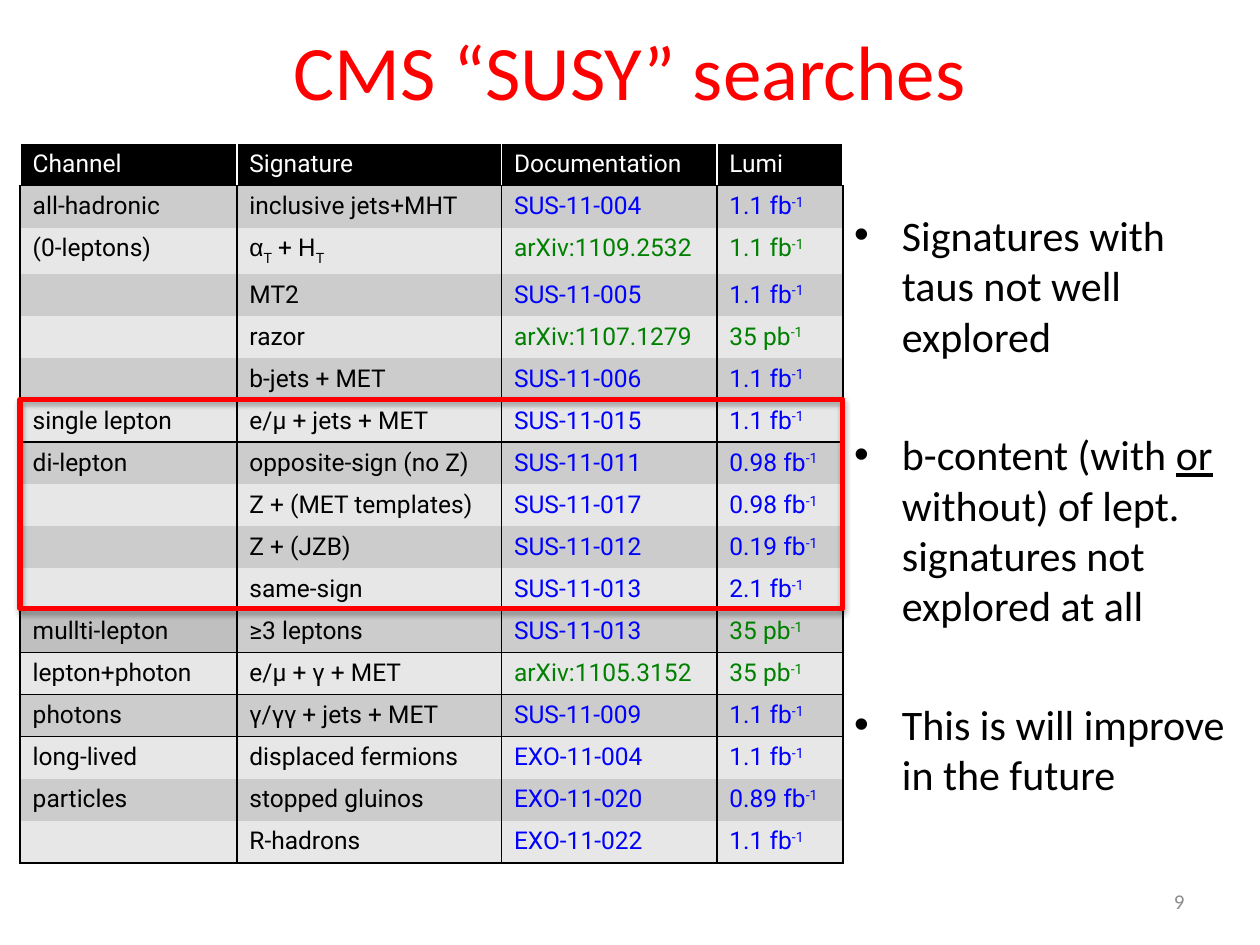
from lxml import etree
from pptx import Presentation
from pptx.dml.color import RGBColor
from pptx.enum.shapes import MSO_SHAPE as Shape
from pptx.enum.text import MSO_ANCHOR as Anchor, PP_ALIGN as Align
from pptx.oxml import parse_xml
from pptx.oxml.ns import nsdecls, qn
from pptx.util import Inches, Pt

COLORS = {
    "black": "000000", "white": "FFFFFF", "red": "FF0000", "blue": "0000FF",
    "green": "008000", "number": "8C8C8C", "dark band": "CCCCCC",
    "light band": "E7E7E7", "marked": "BFBFBF",
}
HEADER = ("Channel", "Signature", "Documentation", "Lumi")
# Each group of searches is framed; "^" raises and "_" lowers a piece between bars.
GROUPS = [
    [("all-hadronic", "inclusive jets+MHT", "SUS-11-004", "1.1 fb"),
     ("(0-leptons)", "α|_T| + H|_T", "arXiv:1109.2532", "1.1 fb"),
     ("", "MT2", "SUS-11-005", "1.1 fb"),
     ("", "razor", "arXiv:1107.1279", "35 pb"),
     ("", "b-jets + MET", "SUS-11-006", "1.1 fb")],
    [("single lepton", "e/μ + jets + MET", "SUS-11-015", "1.1 fb")],
    [("di-lepton", "opposite-sign (no Z)", "SUS-11-011", "0.98 fb"),
     ("", "Z + (MET templates)", "SUS-11-017", "0.98 fb"),
     ("", "Z + (JZB)", "SUS-11-012", "0.19 fb"),
     ("", "same-sign", "SUS-11-013", "2.1 fb")],
    [("mullti-lepton", "≥3 leptons", "SUS-11-013", "35 pb")],
    [("lepton+photon", "e/μ + γ + MET", "arXiv:1105.3152", "35 pb")],
    [("photons", "γ/γγ + jets + MET", "SUS-11-009", "1.1 fb")],
    [("long-lived", "displaced fermions", "EXO-11-004", "1.1 fb"),
     ("particles", "stopped gluinos", "EXO-11-020", "0.89 fb"),
     ("", "R-hadrons", "EXO-11-022", "1.1 fb")],
]
POINTS = [
    ["Signatures with taus not well explored"],
    ["b-content (with ", "or", " without) of lept. signatures not explored at all"],
    ["This is will improve in the future"],
]


def rgb(name):
    return RGBColor.from_string(COLORS[name])


class SlideBuilder:
    body_font = "Calibri"
    table_font = "Roboto"
    table_size = 14
    baselines = {"^": "30000", "_": "-25000"}

    def __init__(self, slide):
        self.slide = slide

    def style(self, run, size, color, font=None):
        run.font.size = Pt(size)
        run.font.name = font or self.body_font
        run.font.color.rgb = rgb(color)

    def title(self, text, left, top, width, height):
        title = self.slide.shapes.title
        title.left, title.top = Inches(left), Inches(top)
        title.width, title.height = Inches(width), Inches(height)
        frame = title.text_frame
        frame.text = text
        frame.vertical_anchor = Anchor.MIDDLE
        frame.paragraphs[0].alignment = Align.CENTER
        self.style(frame.paragraphs[0].runs[0], 44, "red")

    def text_frame(self, left, top, width, height):
        box = self.slide.shapes.add_textbox(
            Inches(left), Inches(top), Inches(width), Inches(height))
        box.text_frame.word_wrap = True
        return box.text_frame

    def slide_number(self, text, *place):
        frame = self.text_frame(*place)
        frame.text = text
        frame.vertical_anchor = Anchor.MIDDLE
        frame.paragraphs[0].alignment = Align.RIGHT
        self.style(frame.paragraphs[0].runs[0], 12, "number")

    def bullets(self, points, *place):
        frame = self.text_frame(*place)
        frame.margin_top = Inches(0.52)
        for index, pieces in enumerate(points):
            paragraph = frame.add_paragraph() if index else frame.paragraphs[0]
            paragraph.space_before = Pt(39 if index else 0)
            properties = paragraph._p.get_or_add_pPr()
            properties.set("marL", str(Inches(0.38)))
            properties.set("indent", str(-Inches(0.38)))
            properties.append(parse_xml(f'<a:buFont {nsdecls("a")} typeface="Arial"/>'))
            properties.append(parse_xml(f'<a:buChar {nsdecls("a")} char="•"/>'))
            for piece in pieces:
                run = paragraph.add_run()
                run.text = piece
                self.style(run, 24, "black")
                run.font.underline = True if piece == "or" else None

    def borders(self, cell, sides):
        """Draw the sides given as {side: colour or None}."""
        properties = cell._tc.get_or_add_tcPr()
        for position, side in enumerate("LRTB"):
            color = sides.get(side)
            line = etree.Element(qn(f"a:ln{side}"), w=str(Pt(1)))
            if color:
                fill = etree.SubElement(line, qn("a:solidFill"))
                etree.SubElement(fill, qn("a:srgbClr"), val=COLORS[color])
            else:
                etree.SubElement(line, qn("a:noFill"))
            properties.insert(position, line)

    def cell(self, cell, text, color, fill, sides):
        cell.fill.solid()
        cell.fill.fore_color.rgb = rgb(fill)
        self.borders(cell, sides)
        paragraph = cell.text_frame.paragraphs[0]
        for piece in filter(None, text.split("|")):
            run = paragraph.add_run()
            run.text = piece.lstrip("^_")
            font = "Arial" if piece == "α" else self.table_font
            self.style(run, self.table_size, color, font)
            if piece[0] in self.baselines:
                run._r.get_or_add_rPr().set("baseline", self.baselines[piece[0]])
        if not text:
            etree.SubElement(paragraph._p, qn("a:endParaRPr"),
                             sz=str(self.table_size * 100))

    def table(self, header, groups, left, top, widths, row_height):
        count = 1 + sum(len(group) for group in groups)
        table = self.slide.shapes.add_table(
            count, len(header), Inches(left), Inches(top),
            Inches(sum(widths)), Inches(row_height * count)).table
        for column, width in zip(table.columns, widths):
            column.width = Inches(width)
        for row in table.rows:
            row.height = Inches(row_height)

        for column, text in enumerate(header):
            sides = dict.fromkeys("LRT", "white") | {"B": "black"}
            self.cell(table.cell(0, column), text, "white", "black", sides)

        row = 0
        for group in groups:
            for index, (channel, signature, document, luminosity) in enumerate(group):
                row += 1
                band = "dark band" if row % 2 else "light band"
                published = document.startswith("arXiv")
                document_color = "green" if published else "blue"
                luminosity_color = ("green" if published or "pb" in luminosity
                                    else "blue")
                sides = {"L": "black", "R": "black",
                         "T": "black" if index == 0 else None,
                         "B": "black" if index == len(group) - 1 else None}
                contents = [(channel, "black"), (signature, "black"),
                            (document, document_color),
                            (luminosity + "|^-1", luminosity_color)]
                for column, (text, color) in enumerate(contents):
                    fill = "marked" if text == "mullti-lepton" else band
                    self.cell(table.cell(row, column), text, color, fill, sides)

    def highlight(self, left, top, width, height):
        frame = self.slide.shapes.add_shape(
            Shape.RECTANGLE, Inches(left), Inches(top), Inches(width), Inches(height))
        frame.fill.background()
        frame.line.color.rgb = rgb("red")
        frame.line.width = Pt(3)
        frame._element.spPr.append(parse_xml(
            f'<a:effectLst {nsdecls("a")}><a:outerShdw blurRad="{Pt(3.1)}" '
            f'dist="{Pt(1.8)}" dir="5400000" rotWithShape="0"><a:srgbClr '
            f'val="{COLORS["black"]}"><a:alpha val="35000"/></a:srgbClr>'
            '</a:outerShdw></a:effectLst>'))


def main():
    presentation = Presentation()
    presentation.slide_width = Inches(10)
    presentation.slide_height = Inches(7.5)
    builder = SlideBuilder(
        presentation.slides.add_slide(presentation.slide_layouts[5]))

    # Page number, then the table with the leptonic searches framed
    builder.slide_number("9", 7.17, 6.95, 2.33, 0.4)
    builder.table(HEADER, GROUPS, 0.16, 1.14, (1.72, 2.1, 1.71, 1), 0.33)
    builder.highlight(0.16, 3.17, 6.53, 1.66)

    # Title and remarks
    builder.title("CMS “SUSY” searches", 0.5, 0.05, 9, 1)
    builder.bullets(POINTS, 6.68, 1.14, 3.2, 5.69)

    presentation.save("out.pptx")


if __name__ == "__main__":
    main()
